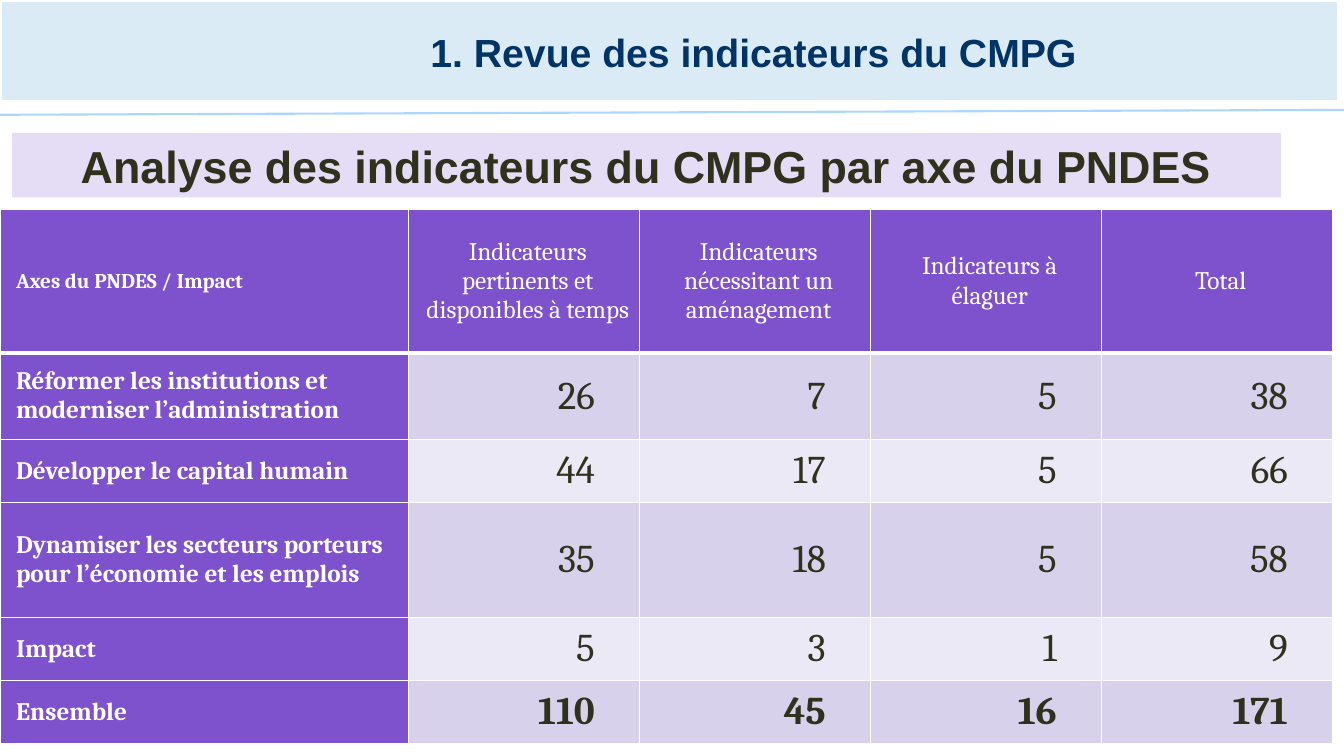
from dataclasses import dataclass

from lxml import etree
from pptx import Presentation
from pptx.dml.color import RGBColor
from pptx.enum.shapes import MSO_CONNECTOR, MSO_SHAPE
from pptx.enum.text import MSO_ANCHOR, PP_ALIGN
from pptx.oxml.ns import qn
from pptx.util import Pt

LEFT, CENTER, RIGHT = PP_ALIGN.LEFT, PP_ALIGN.CENTER, PP_ALIGN.RIGHT
MIDDLE = MSO_ANCHOR.MIDDLE
RECTANGLE = MSO_SHAPE.RECTANGLE
STRAIGHT = MSO_CONNECTOR.STRAIGHT

WHITE, INK, PURPLE = "FFFFFF", "30311D", "7E52CC"
BANDS = ("D8D1EC", "ECE9F6")
CELL_INSET = 5.75
NUMBER_INDENT = 26
THIN, THICK = 1, 3


@dataclass(frozen=True)
class TextStyle:
    size: float
    color: str
    bold: bool
    align: PP_ALIGN
    font: str = "Cambria"
    indent_left: float = 0
    indent_right: float = 0


@dataclass(frozen=True)
class Axis:
    label: str
    counts: tuple[int, ...]
    height: float
    bold: bool = False


TITLE = TextStyle(28, "003366", True, CENTER, "Arial")
SUBTITLE = TextStyle(32, INK, True, CENTER, "Arial")
CORNER = TextStyle(15, WHITE, True, LEFT, indent_left=CELL_INSET)
HEADING = TextStyle(18, WHITE, False, CENTER, indent_left=CELL_INSET)
AXIS_LABEL = TextStyle(18, WHITE, True, LEFT, indent_left=CELL_INSET)

HEADINGS = (
    "Axes du PNDES / Impact",
    "Indicateurs pertinents et disponibles à temps",
    "Indicateurs nécessitant un aménagement",
    "Indicateurs à élaguer",
    "Total",
)
HEADING_HEIGHT = 102.25
COLUMN_WIDTHS = (291.6,) + (165,) * 4
AXES = (
    Axis("Réformer les institutions et moderniser l’administration", (26, 7, 5, 38), 62),
    Axis("Développer le capital humain", (44, 17, 5, 66), 45),
    Axis("Dynamiser les secteurs porteurs pour l’économie et les emplois", (35, 18, 5, 58), 82),
    Axis("Impact", (5, 3, 1, 9), 45),
    Axis("Ensemble", (110, 45, 16, 171), 45, bold=True),
)


def rgb(color: str) -> RGBColor:
    return RGBColor.from_string(color)


def write(frame, text: str, style: TextStyle) -> None:
    frame.word_wrap = True
    paragraph = frame.paragraphs[0]
    paragraph.text = text
    paragraph.alignment = style.align
    properties = paragraph._p.get_or_add_pPr()
    properties.set("marL", str(Pt(style.indent_left)))
    properties.set("marR", str(Pt(style.indent_right)))
    properties.set("indent", "0")
    paragraph.font.name = style.font
    paragraph.font.size = Pt(style.size)
    paragraph.font.bold = style.bold
    paragraph.font.color.rgb = rgb(style.color)


def add_panel(slide, left: float, top: float, width: float, height: float, fill: str):
    panel = slide.shapes.add_shape(RECTANGLE, Pt(left), Pt(top), Pt(width), Pt(height))
    panel.shadow.inherit = False
    panel.fill.solid()
    panel.fill.fore_color.rgb = rgb(fill)
    panel.line.fill.background()
    return panel


def add_header(slide) -> None:
    banner = add_panel(slide, 0, 0, 956, 72.7, "DBEBF5")
    banner.line.color.rgb = rgb(WHITE)
    banner.line.width = Pt(2.25)

    rule = slide.shapes.add_connector(STRAIGHT, Pt(0), Pt(82), Pt(960), Pt(78.5))
    rule.line.color.rgb = rgb("ADD6FF")
    rule.line.width = Pt(1.5)
    etree.SubElement(rule._element.spPr, qn("a:effectLst"))

    title = slide.shapes.title
    title.left, title.top, title.width, title.height = Pt(116.6), Pt(5), Pt(843.2), Pt(64)
    title.text_frame.vertical_anchor = MIDDLE
    write(title.text_frame, "1. Revue des indicateurs du CMPG", TITLE)
    slide.shapes._spTree.append(title._element)  # in front of the banner


def add_subtitle(slide) -> None:
    subtitle = add_panel(slide, 8.6, 95, 906.5, 46, "E5DCF5")
    subtitle.text_frame.vertical_anchor = MIDDLE
    write(subtitle.text_frame, "Analyse des indicateurs du CMPG par axe du PNDES", SUBTITLE)


def border_cell(cell, top: float, bottom: float) -> None:
    properties = cell._tc.get_or_add_tcPr()
    for side, width in (("L", THIN), ("R", THIN), ("T", top), ("B", bottom)):
        border = etree.SubElement(properties, qn(f"a:ln{side}"), w=str(Pt(width)))
        solid = etree.SubElement(border, qn("a:solidFill"))
        etree.SubElement(solid, qn("a:srgbClr"), val=WHITE)


def fill_cell(cell, text: str, style: TextStyle, fill: str,
              top: float = THIN, bottom: float = THIN) -> None:
    border_cell(cell, top, bottom)
    cell.fill.solid()
    cell.fill.fore_color.rgb = rgb(fill)
    cell.vertical_anchor = MIDDLE
    cell.margin_left = cell.margin_right = Pt(CELL_INSET)
    cell.margin_top = cell.margin_bottom = Pt(CELL_INSET)
    write(cell.text_frame, text, style)


def add_axes_table(slide) -> None:
    heights = [HEADING_HEIGHT] + [axis.height for axis in AXES]
    table = slide.shapes.add_table(
        len(heights), len(COLUMN_WIDTHS), Pt(0), Pt(149.8),
        Pt(sum(COLUMN_WIDTHS)), Pt(sum(heights)),
    ).table
    for column, width in zip(table.columns, COLUMN_WIDTHS):
        column.width = Pt(width)
    for row, height in zip(table.rows, heights):
        row.height = Pt(height)

    for index, heading in enumerate(HEADINGS):
        style = HEADING if index else CORNER
        fill_cell(table.cell(0, index), heading, style, PURPLE, bottom=THICK)

    for row, axis in enumerate(AXES, start=1):
        top = THICK if row == 1 else THIN
        number = TextStyle(28, INK, axis.bold, RIGHT,
                           indent_left=CELL_INSET, indent_right=NUMBER_INDENT)
        fill_cell(table.cell(row, 0), axis.label, AXIS_LABEL, PURPLE, top)
        for column, count in enumerate(axis.counts, start=1):
            band = BANDS[(row - 1) % len(BANDS)]
            fill_cell(table.cell(row, column), str(count), number, band, top)


def main() -> None:
    presentation = Presentation()
    presentation.slide_width, presentation.slide_height = Pt(960), Pt(540)
    slide = presentation.slides.add_slide(presentation.slide_layouts[5])
    add_header(slide)
    add_subtitle(slide)
    add_axes_table(slide)
    presentation.save("out.pptx")


if __name__ == "__main__":
    main()
